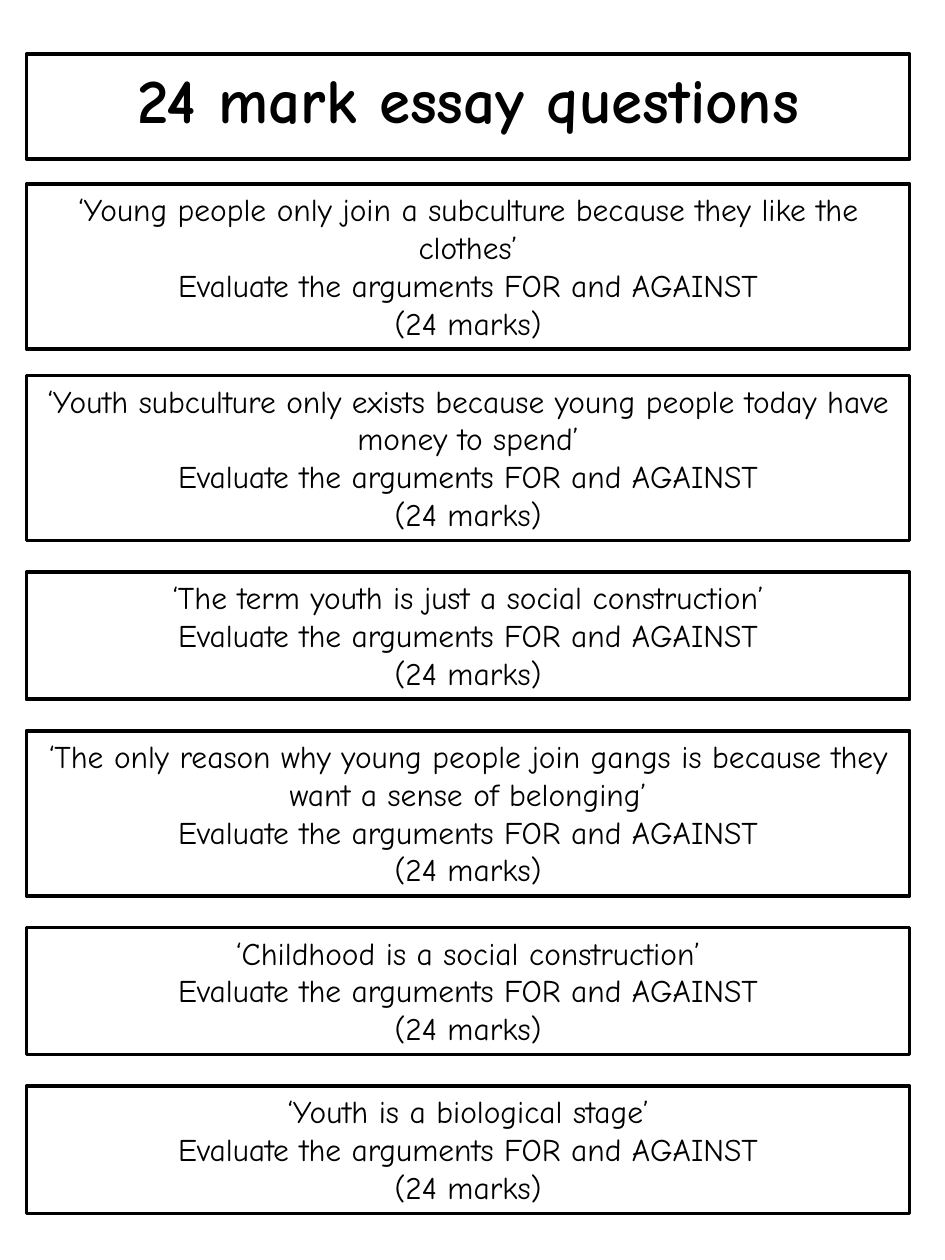
from dataclasses import dataclass

from lxml import etree
from pptx import Presentation
from pptx.dml.color import RGBColor
from pptx.enum.text import MSO_ANCHOR, MSO_AUTO_SIZE, PP_ALIGN
from pptx.oxml.ns import qn
from pptx.util import Inches, Pt

CENTER = PP_ALIGN.CENTER
TOP = MSO_ANCHOR.TOP
GROW = MSO_AUTO_SIZE.SHAPE_TO_FIT_TEXT
TITLE_ONLY = 5

# Content: gap above the box, number of text lines, statement
TITLE = "24 mark essay questions"
TASK = ["Evaluate the arguments FOR and AGAINST", "(24 marks)"]
QUESTIONS = [
    (0.32, 4, "‘Young people only join a subculture because they like the clothes’"),
    (0.21, 4, "‘Youth subculture only exists because young people today have money to spend’"),
    (0.25, 3, "‘The term youth is just a social construction’"),
    (0.25, 4, "‘The only reason why young people join gangs is because they want a sense of belonging’"),
    (0.25, 3, "‘Childhood is a social construction’"),
    (0.25, 3, "‘Youth is a biological stage’"),
]


@dataclass(frozen=True)
class Theme:
    font: str = "Comic Neue"
    ink: str = "000000"
    paper: str = "FFFFFF"
    title_size: float = 36
    body_size: float = 18
    border: float = 2
    outline: float = 0.9


THEME = Theme()

# Layout in inches
LEFT, WIDTH = 0.21, 7.01
TITLE_TOP, TITLE_HEIGHT = 0.43, 0.71
LINE_HEIGHT, PADDING = 0.3, 0.11


def outline_text(span):
    """Draw a thin solid line around the letters of a run."""
    line = etree.Element(qn("a:ln"), w=str(Pt(THEME.outline)))
    fill = etree.SubElement(line, qn("a:solidFill"))
    etree.SubElement(fill, qn("a:srgbClr"), val=THEME.ink)
    span.font._element.insert(0, line)


def write(box, lines, size=THEME.body_size, bold=False, outlined=False):
    """Fill a box with centred paragraphs."""
    frame = box.text_frame
    frame.word_wrap = True
    frame.auto_size = GROW
    frame.vertical_anchor = TOP
    for index, text in enumerate(lines):
        para = frame.add_paragraph() if index else frame.paragraphs[0]
        para.alignment = CENTER
        span = para.add_run()
        span.text = text
        span.font.name = THEME.font
        span.font.size = Pt(size)
        span.font.bold = bold
        span.font.color.rgb = RGBColor.from_string(THEME.ink)
        if outlined:
            outline_text(span)


def frame_box(box):
    """Give a box its white fill and black border."""
    box.fill.solid()
    box.fill.fore_color.rgb = RGBColor.from_string(THEME.paper)
    box.line.color.rgb = RGBColor.from_string(THEME.ink)
    box.line.width = Pt(THEME.border)


def main():
    deck = Presentation()
    deck.slide_width, deck.slide_height = Inches(7.5), Inches(10)
    page = deck.slides.add_slide(deck.slide_layouts[TITLE_ONLY])

    # Title
    title = page.shapes.title
    title.left, title.top = Inches(LEFT), Inches(TITLE_TOP)
    title.width, title.height = Inches(WIDTH), Inches(TITLE_HEIGHT)
    frame_box(title)
    write(title, [TITLE], size=THEME.title_size, bold=True, outlined=True)

    # Question boxes, stacked below the title
    bottom = TITLE_TOP + TITLE_HEIGHT
    for gap, line_count, statement in QUESTIONS:
        top = bottom + gap
        height = PADDING + LINE_HEIGHT * line_count
        box = page.shapes.add_textbox(
            Inches(LEFT), Inches(top), Inches(WIDTH), Inches(height))
        frame_box(box)
        write(box, [statement, *TASK])
        bottom = top + height

    deck.save("out.pptx")


if __name__ == "__main__":
    main()
